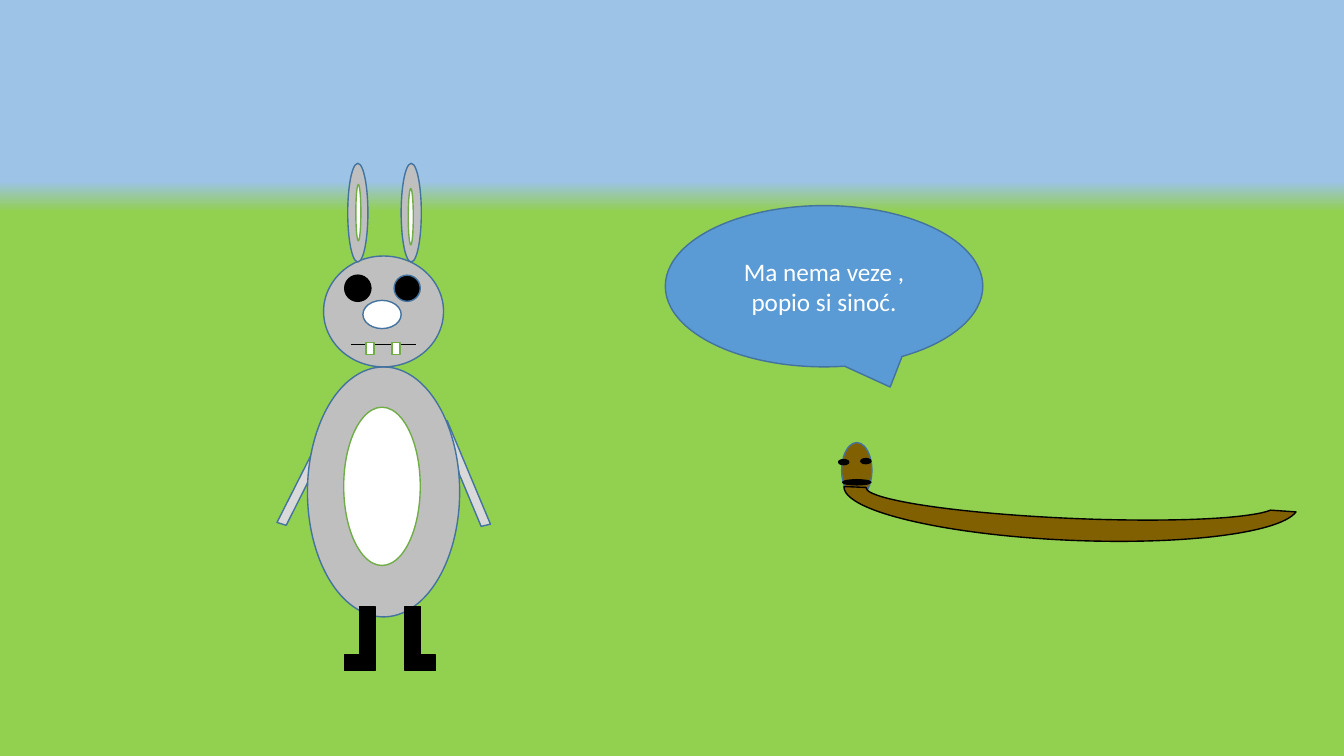
from dataclasses import dataclass
from lxml.etree import SubElement
from pptx import Presentation
from pptx.dml.color import RGBColor
from pptx.enum.shapes import MSO_CONNECTOR, MSO_SHAPE
from pptx.enum.text import MSO_ANCHOR, PP_ALIGN
from pptx.oxml.ns import qn
from pptx.shapes.autoshape import Shape
from pptx.slide import Slide
from pptx.util import Inches, Pt

COLS, ROWS = 133.33, 75
CELL = Inches(0.1)
OVAL, RECT = MSO_SHAPE.OVAL, MSO_SHAPE.RECTANGLE
BOOT = MSO_SHAPE.from_xml("corner")
BLUE, GREEN, BLACK, WHITE = "43739E", "70AD47", "000000", "FFFFFF"
FUR, ARM, MUD = "BFBFBF", "D9D9D9", "806000"
FONT = {"name": "Calibri", "size": Pt(18)}
FRAME = {"word_wrap": True, "vertical_anchor": MSO_ANCHOR.MIDDLE}


@dataclass(frozen=True)
class Part:
    """A shape placed in columns and rows of the grid."""
    x: float
    y: float
    w: float
    h: float
    fill: str
    line: str = BLUE
    kind: MSO_SHAPE = OVAL
    turn: float = 0
    flip: bool = False
    bend: tuple[float, ...] = ()


LIMBS = [
    Part(41, 45.9, 11, 1.9, ARM, kind=MSO_SHAPE.DIAGONAL_STRIPE, turn=257.1),
    Part(24.5, 45.9, 11, 1.9, ARM, kind=MSO_SHAPE.DIAGONAL_STRIPE, turn=107, flip=True),
]
TRUNK = [Part(30.5, 36.4, 15.1, 24.8, FUR), Part(32.1, 25.4, 11.9, 11, FUR)]
EARS = [Part(x, 16.2, 2, 9.8, FUR) for x in (39.8, 34.5)]
FACE = [
    Part(34.2, 27.3, 2.6, 2.6, BLACK, BLACK),
    Part(39.1, 27.3, 2.6, 2.6, BLACK),
    Part(36, 29.8, 3.8, 2.8, WHITE),
]
TEETH = [Part(x, 34, 0.8, 1.2, WHITE, GREEN, RECT) for x in (36.3, 38.9)]
BELLY = [Part(34.1, 40.4, 7.6, 15.7, WHITE, GREEN)]
INNER = [Part(x, y, 0.5, 5.6, WHITE, GREEN) for x, y in ((35.3, 18.3), (40.5, 18.7))]
BOOTS = [
    Part(x, 60.2, 3, 6.3, BLACK, BLACK, BOOT, flip=flip)
    for x, flip in ((40.2, False), (34.2, True))
]
WORM = [
    Part(83.5, 43.9, 3, 5.5, MUD),
    Part(83.7, 44.9, 45.1, 8.7, MUD, BLACK, MSO_SHAPE.BLOCK_ARC, 182.5,
         bend=(108.859, 0, 0.25)),
    Part(85.4, 45.5, 1, 0.5, BLACK, BLACK),
    Part(83.2, 45.6, 1, 0.5, BLACK, BLACK),
    Part(83.6, 47.6, 2.8, 0.5, BLACK, BLACK),
]
SPEECH = Part(66, 20.4, 31.5, 16, "5B9BD5", kind=MSO_SHAPE.OVAL_CALLOUT, flip=True)


def grid(*cells: float) -> list[int]:
    """Turn grid counts into lengths."""
    return [round(cell * CELL) for cell in cells]


def paint(target, code: str) -> None:
    """Give a fill, line or font colour from a hex string."""
    target.rgb = RGBColor.from_string(code)


def apply(target, values: dict) -> None:
    """Set attributes from a dict of format values."""
    for name, value in values.items():
        setattr(target, name, value)


def draw(shapes, part: Part) -> Shape:
    """Draw one part."""
    shape = shapes.add_shape(part.kind, *grid(part.x, part.y, part.w, part.h))
    shape.shadow.inherit = False
    shape.rotation = part.turn
    shape.fill.solid()
    paint(shape.fill.fore_color, part.fill)
    paint(shape.line.color, part.line)
    shape.line.width = Pt(1)
    for i, value in enumerate(part.bend):
        shape.adjustments[i] = value
    if part.flip:
        shape.element.spPr.find(qn("a:xfrm")).set("flipH", "1")
    return shape


def mouth(shapes) -> None:
    """Draw the thin line of the mouth."""
    line = shapes.add_connector(MSO_CONNECTOR.STRAIGHT, *grid(34.8, 34.2, 41.3, 34.2))
    paint(line.line.color, BLACK)
    line.line.width = Pt(0.5)
    SubElement(line.element.spPr, qn("a:effectLst"))


def speak(slide: Slide, words: str) -> None:
    """Draw the speech bubble with its words."""
    frame = draw(slide.shapes, SPEECH).text_frame
    apply(frame, FRAME)
    text = frame.paragraphs[0]
    text.alignment = PP_ALIGN.CENTER
    run = text.add_run()
    run.text = words
    apply(run.font, FONT)
    paint(run.font.color, WHITE)


def meadow(slide: Slide) -> None:
    """Blend the sky into the grass."""
    fill = slide.background.fill
    fill.gradient()
    fill.gradient_angle = 270
    for stop, (place, code) in zip(fill.gradient_stops, ((0.24, "9DC3E6"), (0.28, "92D050"))):
        stop.position = place
        paint(stop.color, code)


def main() -> None:
    """Build and save the slide."""
    deck = Presentation()
    deck.slide_width, deck.slide_height = grid(COLS, ROWS)
    slide = deck.slides.add_slide(deck.slide_layouts[6])
    meadow(slide)
    hare = slide.shapes.add_group_shape().shapes
    for part in LIMBS + TRUNK + EARS + FACE:
        draw(hare, part)
    mouth(hare)
    for part in TEETH + BELLY + INNER + BOOTS:
        draw(hare, part)
    worm = slide.shapes.add_group_shape().shapes
    for part in WORM:
        draw(worm, part)
    speak(slide, "Ma nema veze , popio si sinoć.")
    deck.save("out.pptx")


if __name__ == "__main__":
    main()
